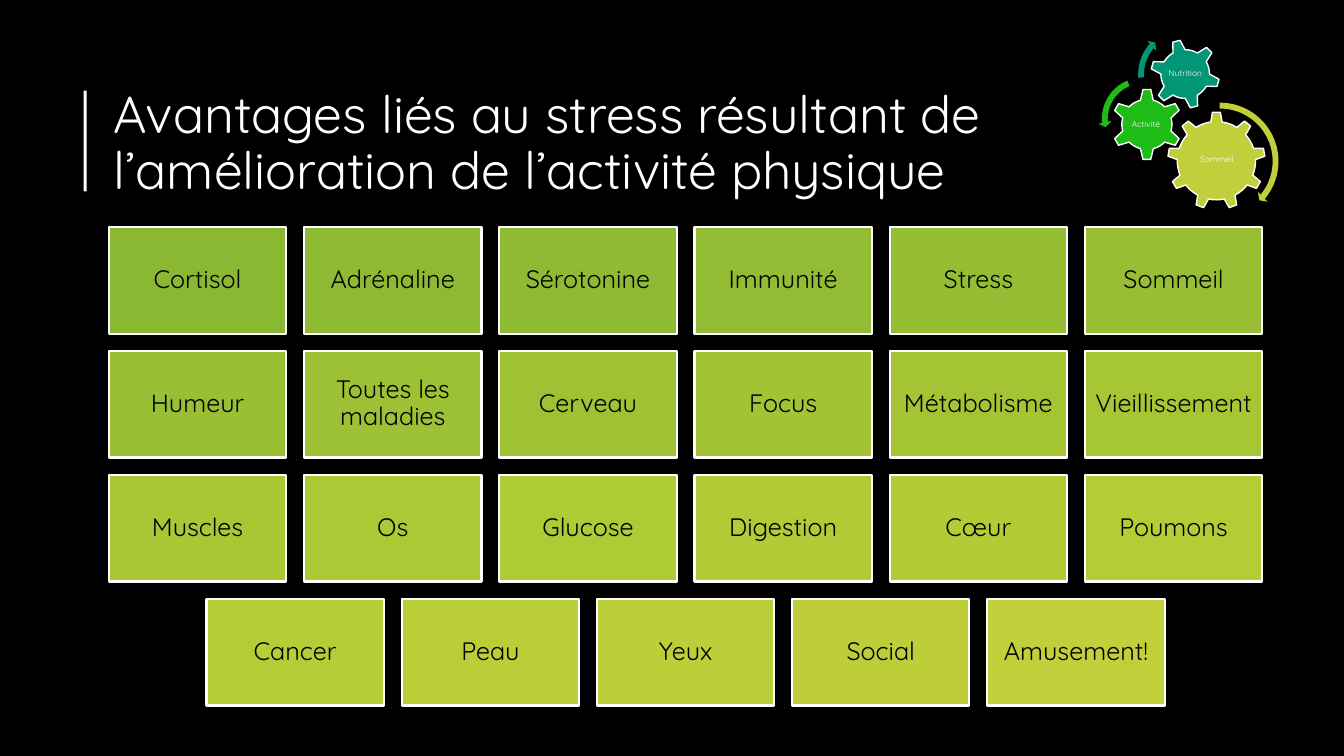
from dataclasses import dataclass

from pptx import Presentation
from pptx.dml.color import RGBColor
from pptx.enum import shapes, text
from pptx.util import Inches, Pt


@dataclass(frozen=True)
class Theme:
    """Colours, font and type sizes of the slide."""
    font: str = "Quicksand"
    black: str = "000000"
    white: str = "FFFFFF"
    lime: str = "C0CF3A"
    green: str = "1FBB16"
    teal: str = "029676"
    tile_stops: tuple = ((0, "8AB833"), (16, "B3CC35"), (22, "C0CF3A"))
    title_size: int = 37
    tile_size: int = 18
    gear_size: int = 6


THEME = Theme()
SHAPE = shapes.MSO_SHAPE

TITLE = "Avantages liés au stress résultant de l’amélioration de l’activité physique"
BENEFITS = [
    ["Cortisol", "Adrénaline", "Sérotonine", "Immunité", "Stress", "Sommeil"],
    ["Humeur", "Toutes les maladies", "Cerveau", "Focus", "Métabolisme", "Vieillissement"],
    ["Muscles", "Os", "Glucose", "Digestion", "Cœur", "Poumons"],
    ["Cancer", "Peau", "Yeux", "Social", "Amusement!"],
]
GEARS = [
    ("Sommeil", SHAPE.GEAR_9, (11.58, 1.11, 0.97, 0.97), 0, THEME.lime, (11.78, 1.34, 0.58, 0.5)),
    ("Activité", SHAPE.GEAR_6, (11.02, 0.88, 0.71, 0.71), 0, THEME.green, (11.19, 1.06, 0.35, 0.35)),
    ("Nutrition", SHAPE.GEAR_6, (11.41, 0.39, 0.69, 0.69), 345, THEME.teal, (11.56, 0.54, 0.39, 0.39)),
]
ARROWS = [
    (SHAPE.CIRCULAR_ARROW, (11.48, 0.98, 1.24, 1.24), THEME.lime, 4.7, (4.98, 39.76, 269.65), 5.5),
    (SHAPE.LEFT_CIRCULAR_ARROW, (10.89, 0.73, 0.9, 0.9), THEME.green, 6.5, (7.17, 174.82, 247.3), 7.5),
    (SHAPE.CIRCULAR_ARROW, (11.25, 0.25, 0.97, 0.97), THEME.teal, 6, (6.57, 221.9, 175.14), 7),
]


def tile_color(index):
    """Blend the tile colour stops at a tile index."""
    stops = THEME.tile_stops
    for (start, low), (end, high) in zip(stops, stops[1:]):
        if index <= end:
            share = (index - start) / (end - start)
            pairs = zip(bytes.fromhex(low), bytes.fromhex(high))
            return "".join(f"{round(a + (b - a) * share):02X}" for a, b in pairs)


def add_block(slide, kind, box, fill, line_width=0):
    """Add a flat filled shape, outlined in white when a width is given."""
    block = slide.shapes.add_shape(kind, *map(Inches, box))
    block.shadow.inherit = False
    block.fill.solid()
    block.fill.fore_color.rgb = RGBColor.from_string(fill)
    if line_width:
        block.line.color.rgb = RGBColor.from_string(THEME.white)
        block.line.width = Pt(line_width)
    else:
        block.line.fill.background()
    return block


def write(holder, words, size, color, inset, align=text.PP_ALIGN.CENTER):
    """Fill a shape with one vertically centred paragraph."""
    frame = holder.text_frame
    frame.text = words
    frame.word_wrap = True
    frame.auto_size = text.MSO_AUTO_SIZE.NONE
    frame.vertical_anchor = text.MSO_ANCHOR.MIDDLE
    frame.margin_left = frame.margin_right = Inches(inset)
    frame.margin_top = frame.margin_bottom = Inches(min(inset, 0.07))
    paragraph = frame.paragraphs[0]
    paragraph.alignment = align
    paragraph.line_spacing = 0.9
    paragraph.space_before = Pt(0)
    for run in paragraph.runs:
        run.font.name = THEME.font
        run.font.size = Pt(size)
        run.font.color.rgb = RGBColor.from_string(color)


def add_title(slide):
    """Place the title beside its vertical rule."""
    title = slide.shapes.title
    title.left, title.top, title.width, title.height = map(Inches, (1.03, 0.78, 11.39, 1.31))
    write(title, TITLE, THEME.title_size, THEME.white, 0.1, text.PP_ALIGN.LEFT)
    add_block(slide, SHAPE.RECTANGLE, (0.83, 0.9, 0.03, 1), THEME.white)


def add_benefits(slide):
    """Lay the benefits out in rows, centring the shorter one."""
    first_left, last_left, top = 1.08, 10.76, 2.25
    columns = len(BENEFITS[0])
    pitch = (last_left - first_left) / (columns - 1)
    for row, names in enumerate(BENEFITS):
        row_left = first_left + (columns - len(names)) * pitch / 2
        for column, name in enumerate(names):
            box = (row_left + column * pitch, top + row * 1.23, 1.76, 1.06)
            tile = add_block(slide, SHAPE.RECTANGLE, box, tile_color(row * columns + column), 1.5)
            write(tile, name, THEME.tile_size, THEME.black, 0.07)


def add_gear(slide, name, kind, box, rotation, fill, label_box):
    """Add a gear with an upright label."""
    add_block(slide, kind, box, fill, 1).rotation = rotation
    label = slide.shapes.add_textbox(*map(Inches, label_box))
    write(label, name, THEME.gear_size, THEME.white, 0.01)


def add_arc_arrow(slide, kind, box, fill, thickness, degrees, head):
    """Add a curved arrow from percentages and angles in degrees."""
    arrow = add_block(slide, kind, box, fill)
    values = (thickness / 100, *(angle * 0.6 for angle in degrees), head / 100)
    for index, value in enumerate(values):
        arrow.adjustments[index] = value


def main():
    """Build and save the slide."""
    deck = Presentation()
    deck.slide_width, deck.slide_height = Inches(13.33), Inches(7.5)
    slide = deck.slides.add_slide(deck.slide_layouts[5])
    backdrop = add_block(slide, SHAPE.RECTANGLE, (0, 0, 13.33, 7.5), THEME.black)
    slide.shapes.title.element.addprevious(backdrop.element)
    add_title(slide)
    add_benefits(slide)
    for gear in GEARS:
        add_gear(slide, *gear)
    for arrow in ARROWS:
        add_arc_arrow(slide, *arrow)
    deck.save("out.pptx")


if __name__ == "__main__":
    main()
